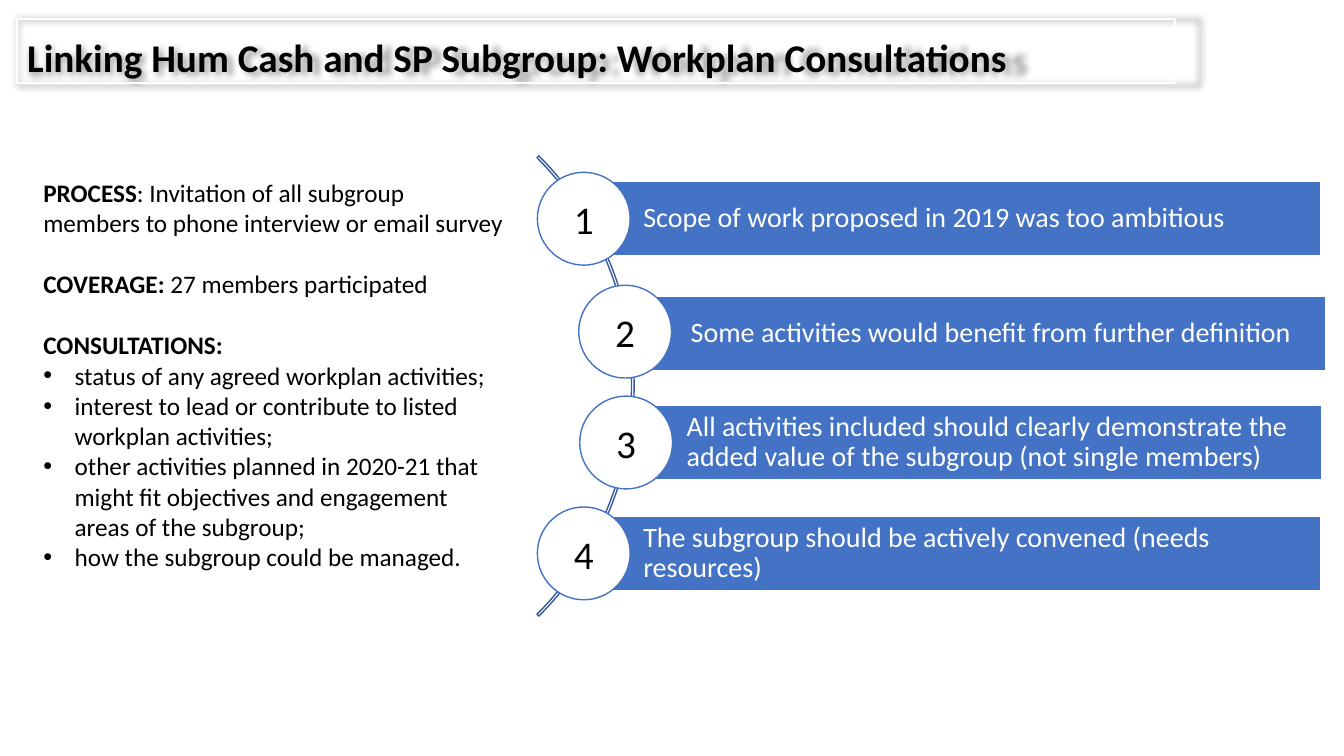
from lxml import etree
from pptx import Presentation
from pptx.dml.color import RGBColor
from pptx.enum.shapes import MSO_SHAPE
from pptx.enum.text import MSO_ANCHOR, MSO_AUTO_SIZE, PP_ALIGN
from pptx.oxml.ns import qn
from pptx.util import Inches, Pt

RECT, OVAL, ARC = MSO_SHAPE.RECTANGLE, MSO_SHAPE.OVAL, MSO_SHAPE.BLOCK_ARC
TOP, MIDDLE = MSO_ANCHOR.TOP, MSO_ANCHOR.MIDDLE
LEFT, CENTER = PP_ALIGN.LEFT, PP_ALIGN.CENTER
FIXED = MSO_AUTO_SIZE.NONE

BLACK = RGBColor(0x00, 0x00, 0x00)
WHITE = RGBColor(0xFF, 0xFF, 0xFF)
BLUE = RGBColor(0x44, 0x72, 0xC4)
DARK_BLUE = RGBColor(0x36, 0x5B, 0x9D)

FONT = "Calibri"
BAR_HEIGHT = 0.74
CIRCLE = 0.92
LINE_GAP = 22  # one 18 pt line, in points

# Circle left, circle top, bar left, bar top, bar width, text
FINDINGS = [
    (5.33, 1.71, 5.79, 1.80, 7.31,
     "Scope of work proposed in 2019 was too ambitious"),
    (5.74, 2.83, 6.26, 2.94, 6.89,
     "Some activities would benefit from further definition"),
    (5.75, 3.93, 6.22, 4.02, 6.89,
     "All activities included should clearly demonstrate the added value "
     "of the subgroup (not single members)"),
    (5.33, 5.03, 5.79, 5.12, 7.31,
     "The subgroup should be actively convened (needs resources)"),
]

# Bold lead, plain text, space before
STATEMENTS = [
    ("PROCESS", ": Invitation of all subgroup members to phone interview "
     "or email survey", 0),
    ("COVERAGE: ", "27 members participated", LINE_GAP),
    ("CONSULTATIONS:", "", LINE_GAP),
]
TOPICS = [
    "status of any agreed workplan activities;",
    "interest to lead or contribute to listed workplan activities;",
    "other activities planned in 2020-21 that might fit objectives and "
    "engagement areas of the subgroup;",
    "how the subgroup could be managed.",
]


def place(sp, left, top, width, height):
    sp.left, sp.top = Inches(left), Inches(top)
    sp.width, sp.height = Inches(width), Inches(height)


def set_frame(sp, anchor, insets=(0.1, 0.05, 0.1, 0.05)):
    tf = sp.text_frame
    tf.word_wrap = True
    tf.auto_size = FIXED
    tf.vertical_anchor = anchor
    (tf.margin_left, tf.margin_top,
     tf.margin_right, tf.margin_bottom) = map(Inches, insets)
    return tf


def add_run(p, text, size, color, bold=False):
    r = p.add_run()
    r.text = text
    r.font.name, r.font.size, r.font.bold = FONT, Pt(size), bold
    r.font.color.rgb = color


def set_bullet(p, char=None):
    pPr = p._p.get_or_add_pPr()
    indent = Inches(0.31) if char else 0
    pPr.set("marL", str(indent))
    pPr.set("indent", str(-indent))
    if char:
        etree.SubElement(pPr, qn("a:buFont")).set("typeface", "Arial")
        etree.SubElement(pPr, qn("a:buChar")).set("char", char)
    else:
        etree.SubElement(pPr, qn("a:buNone"))


def add_soft_shadow(sp):
    effects = etree.SubElement(sp._element.spPr, qn("a:effectLst"))
    shadow = etree.SubElement(
        effects, qn("a:outerShdw"), blurRad=str(Pt(5)), dist="0", dir="0",
        sx="102000", sy="102000", algn="ctr", rotWithShape="0")
    color = etree.SubElement(shadow, qn("a:srgbClr"), val=str(BLACK))
    etree.SubElement(color, qn("a:alpha"), val="40000")


def add_figure(slide, kind, box, fill, line):
    sp = slide.shapes.add_shape(kind, *map(Inches, box))
    sp.shadow.inherit = False
    if fill is None:
        sp.fill.background()
    else:
        sp.fill.solid()
        sp.fill.fore_color.rgb = fill
    sp.line.color.rgb = line
    sp.line.width = Pt(1)
    return sp


def fill_title(sp):
    place(sp, 0.17, 0.19, 11.48, 0.63)
    sp.line.color.rgb = WHITE
    sp.line.width = Pt(1.5)
    add_soft_shadow(sp)
    p = set_frame(sp, TOP).paragraphs[0]
    p.alignment = LEFT
    p.line_spacing = 1.2
    add_run(p, "Linking Hum Cash and SP Subgroup: Workplan Consultations",
            28, BLACK, True)


def fill_body(sp):
    place(sp, 0.33, 1.71, 4.76, 4.64)
    tf = set_frame(sp, TOP)
    rows = [(*statement, None) for statement in STATEMENTS]
    rows += [("", topic, 0, "•") for topic in TOPICS]
    for i, (lead, text, before, bullet) in enumerate(rows):
        p = tf.add_paragraph() if i else tf.paragraphs[0]
        p.space_before = Pt(before)
        set_bullet(p, bullet)
        if lead:
            add_run(p, lead, 18, BLACK, True)
        if text:
            add_run(p, text, 18, BLACK)


def add_finding(slide, number, finding):
    circle_left, circle_top, left, top, width, text = finding
    bar = add_figure(slide, RECT, (left, top, width, BAR_HEIGHT), BLUE, WHITE)
    p = set_frame(bar, MIDDLE, (0.59, 0.06, 0.06, 0.06)).paragraphs[0]
    p.alignment = LEFT
    p.line_spacing = 0.9
    add_run(p, text, 20, WHITE)

    circle = add_figure(slide, OVAL, (circle_left, circle_top, CIRCLE, CIRCLE),
                        WHITE, BLUE)
    p = set_frame(circle, MIDDLE, (0, 0, 0, 0)).paragraphs[0]
    p.alignment = CENTER
    add_run(p, str(number), 28, BLACK)


def main():
    prs = Presentation()
    prs.slide_width, prs.slide_height = Inches(13.33), Inches(7.5)
    slide = prs.slides.add_slide(prs.slide_layouts[1])

    # Title and consultation notes
    fill_title(slide.shapes.title)
    fill_body(slide.placeholders[1])

    # Arc behind the numbered findings
    arc = add_figure(slide, ARC, (-0.17, 0.6, 6.46, 6.46), None, DARK_BLUE)
    for i, value in enumerate((189, 27, 0.004)):
        arc.adjustments[i] = value

    # Numbered findings
    for number, finding in enumerate(FINDINGS, 1):
        add_finding(slide, number, finding)

    prs.save("out.pptx")


if __name__ == "__main__":
    main()
